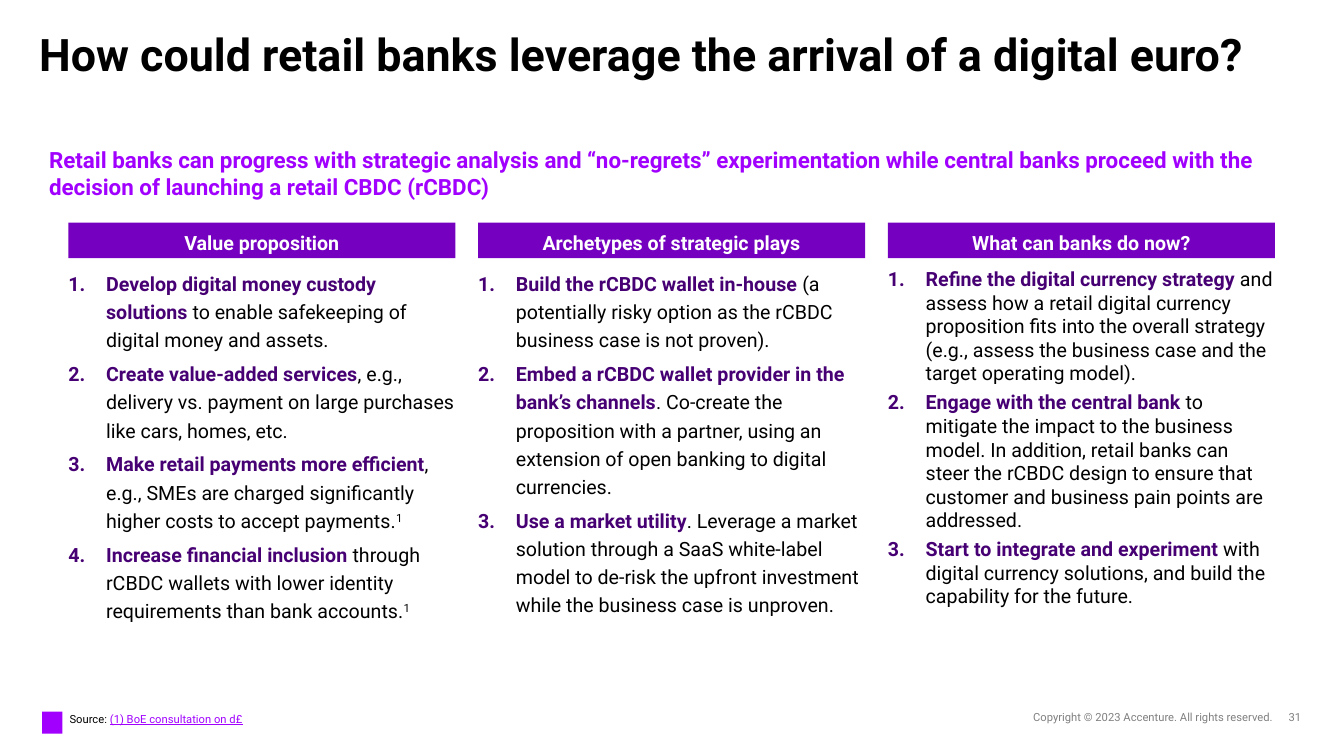
"""Build the slide on how retail banks could use a digital euro."""
from pptx import Presentation
from pptx.dml.color import RGBColor
from pptx.enum.shapes import MSO_SHAPE as Kind
from pptx.enum.text import MSO_ANCHOR as Anchor, PP_ALIGN as Align
from pptx.oxml.ns import qn
from pptx.util import Pt
from lxml.etree import SubElement as Sub

tint = RGBColor.from_string


def box(x, y, w, h, fill=None, inset=(0, 0)):
    area = [Pt(n) for n in (x, y, w, h)]
    if fill:
        shape = slide.shapes.add_shape(Kind.RECTANGLE, *area)
        shape.shadow.inherit = False
        shape.fill.solid()
        shape.fill.fore_color.rgb = tint(fill)
        shape.line.fill.background()
    else:
        shape = slide.shapes.add_textbox(*area)
    frame = shape.text_frame
    frame.word_wrap = True
    frame.vertical_anchor = Anchor.MIDDLE if fill else Anchor.TOP
    frame.margin_left = frame.margin_right = Pt(inset[0])
    frame.margin_top = frame.margin_bottom = Pt(inset[1])
    return frame


def put(para, text, size=14, color="000000", bold=False, line=False, lift=0, align=None):
    run = para.add_run()
    run.text = text
    font = run.font
    font.name, font.size, font.bold = "Roboto", Pt(size), bold
    font.color.rgb = tint(color)
    if line:
        font.underline = True
    if lift:
        font._element.set("baseline", str(lift * 1000))
    if align is not None:
        para.alignment = align


deck = Presentation()
deck.slide_width, deck.slide_height = Pt(960), Pt(540)
slide = deck.slides.add_slide(deck.slide_layouts[6])

title = box(28, 19.4, 883, 43)
put(title.paragraphs[0], "How could retail banks leverage the arrival of a digital euro?",
    size=32, bold=True)
lead = box(28, 100.8, 895, 48, inset=(7.2, 3.6))
put(lead.paragraphs[0], "Retail banks can progress with strategic analysis and “no-regrets” "
    "experimentation while central banks proceed with the decision of launching a retail "
    "CBDC (rCBDC)", size=16, color="A100FF", bold=True)

cols = [
    ("Value proposition", 1.2, [
        ("Develop digital money custody solutions",
         " to enable safekeeping of digital money and assets.", ""),
        ("Create value-added services",
         ", e.g., delivery vs. payment on large purchases like cars, homes, etc.", ""),
        ("Make retail payments more efficient",
         ", e.g., SMEs are charged significantly higher costs to accept payments.", "1"),
        ("Increase financial inclusion",
         " through rCBDC wallets with lower identity requirements than bank accounts.", "1"),
    ]),
    ("Archetypes of strategic plays", 1.2, [
        ("Build the rCBDC wallet in-house",
         " (a potentially risky option as the rCBDC business case is not proven).", ""),
        ("Embed a rCBDC wallet provider in the bank’s channels",
         ". Co-create the proposition with a partner, using an extension of open banking "
         "to digital currencies.", ""),
        ("Use a market utility",
         ". Leverage a market solution through a SaaS white-label model to de-risk the "
         "upfront investment while the business case is unproven.", ""),
    ]),
    ("What can banks do now?", 1.0, [
        ("Refine the digital currency strategy",
         " and assess how a retail digital currency proposition fits into the overall "
         "strategy (e.g., assess the business case and the target operating model).", ""),
        ("Engage with the central bank",
         " to mitigate the impact to the business model. In addition, retail banks can "
         "steer the rCBDC design to ensure that customer and business pain points are "
         "addressed.", ""),
        ("Start to integrate and experiment",
         " with digital currency solutions, and build the capability for the future.", ""),
    ]),
]
for i, (head, space, items) in enumerate(cols):
    left = 48.8 + 292.7 * i
    bar = box(left, 159, 276.5, 25.4, fill="7500C0").paragraphs[0]
    bar.line_spacing = 1.2
    put(bar, head, color="FFFFFF", bold=True, align=Align.CENTER)
    body = box(left, 190.8, 276.5, 297)
    for j, (key, rest, note) in enumerate(items):
        para = body.paragraphs[0] if j == 0 else body.add_paragraph()
        para.line_spacing, para.space_after = space, Pt(4)
        props = para._p.get_or_add_pPr()
        props.set("marL", str(Pt(27)))
        props.set("indent", str(Pt(-27)))
        Sub(props, qn("a:buFont"), typeface="+mj-lt")
        Sub(props, qn("a:buAutoNum"), type="arabicPeriod")
        put(para, key, color="460073", bold=True)
        put(para, rest)
        if note:
            put(para, note, lift=30)

box(30.2, 508.3, 14.4, 15.8, fill="A100FF")
foot = box(49.7, 508, 493, 11, inset=(0, 0.7)).paragraphs[0]
put(foot, "Source: ", size=8)
put(foot, "(1) BoE consultation on d£", size=8, color="A100FF", line=True)
for x, w, text in [(659.5, 250, "Copyright © 2023 Accenture. All rights reserved."),
                   (910, 19.5, "31")]:
    put(box(x, 507.6, w, 10).paragraphs[0], text, size=8, color="808080", align=Align.RIGHT)

deck.save("out.pptx")
